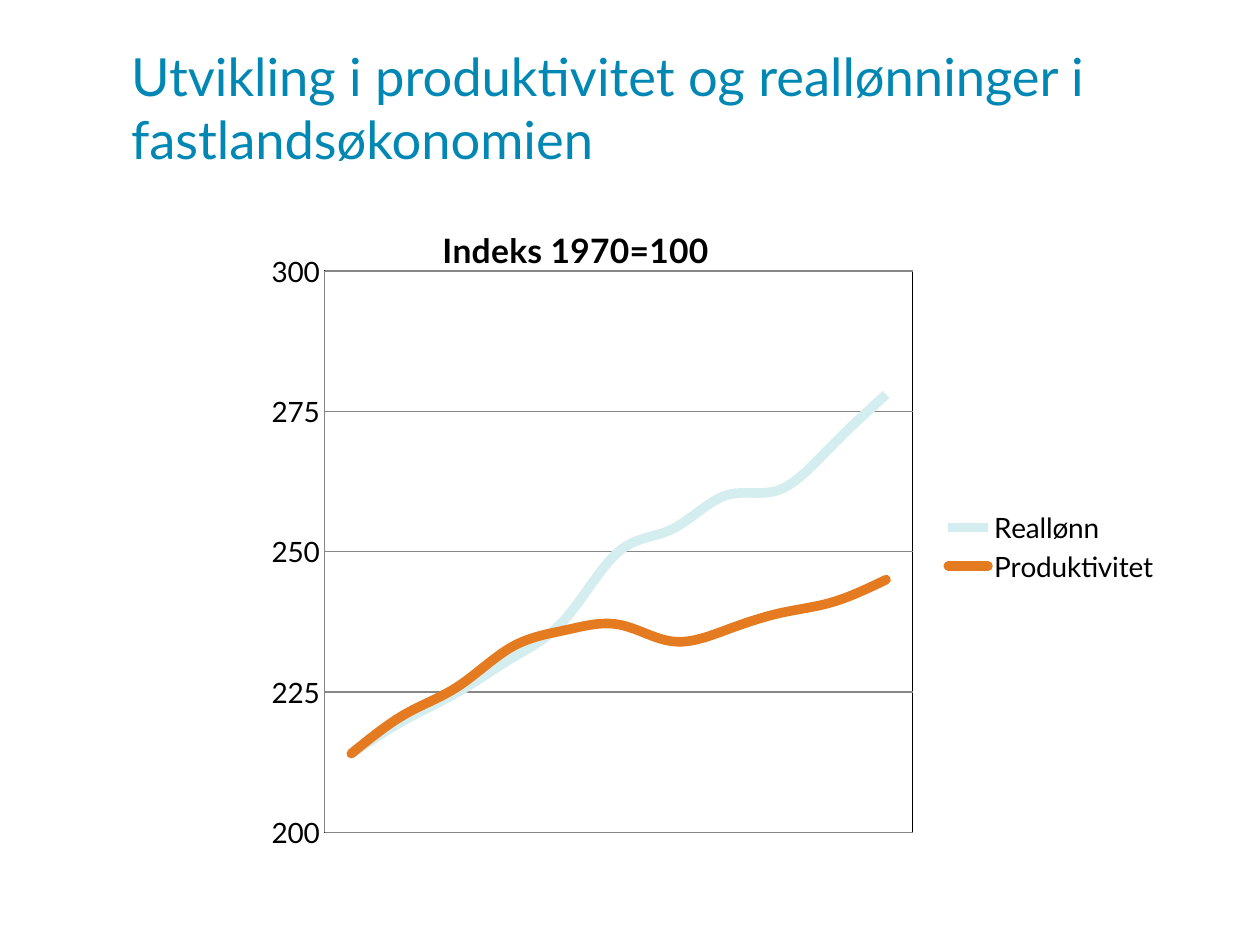
from lxml import etree
from pptx import Presentation
from pptx.chart.data import CategoryChartData
from pptx.dml.color import RGBColor
from pptx.enum.chart import XL_CHART_TYPE as ChartType, XL_LEGEND_POSITION as LegendPosition
from pptx.enum.chart import XL_TICK_LABEL_POSITION as LabelPosition, XL_TICK_MARK as TickMark
from pptx.enum.text import MSO_ANCHOR as Anchor, PP_ALIGN as Align
from pptx.oxml import parse_xml
from pptx.oxml.ns import nsdecls, qn
from pptx.util import Inches, Pt

FONT = "Lato"
YEARS = [str(year) for year in range(2002, 2013)]
INDEXES = [
    ("Reallønn", "D4EDEF", "flat",
     [214, 220, 225, 231, 238, 250, 254, 260, 261, 269, 278]),
    ("Produktivitet", "E57B20", "rnd",
     [214, 221, 226, 233, 236, 237, 234, 236, 239, 241, 245]),
]


def color(value):
    return RGBColor.from_string(value)


def style_font(font, size, value, bold=False):
    font.name = FONT
    font.size = Pt(size)
    font.bold = bold
    font.color.rgb = color(value)


def style_line(line, value, width):
    line.color.rgb = color(value)
    line.width = Pt(width)


def manual_layout(inner=False, **shares):
    layout = etree.Element(qn("c:layout"))
    manual = etree.SubElement(layout, qn("c:manualLayout"))
    settings = {"layoutTarget": "inner"} if inner else {}
    settings.update(xMode="edge", yMode="edge", **shares)
    for tag, setting in settings.items():
        etree.SubElement(manual, qn(f"c:{tag}")).set("val", str(setting))
    return layout


def add_heading(slide, text):
    heading = slide.shapes.title
    heading.left, heading.top = Inches(0.94), Inches(0.3)
    heading.width, heading.height = Inches(8.56), Inches(1.25)
    frame = heading.text_frame
    frame.word_wrap = True
    frame.vertical_anchor = Anchor.TOP
    paragraph = frame.paragraphs[0]
    paragraph.alignment = Align.LEFT
    run = paragraph.add_run()
    run.text = text
    style_font(run.font, 30, "0087B3")


def style_axes(chart):
    years, index = chart.category_axis, chart.value_axis
    for axis in (years, index):
        axis.major_tick_mark = axis.minor_tick_mark = TickMark.NONE
        style_line(axis.format.line, "868686", 0.75)
    years.tick_label_position = LabelPosition.NONE
    index.minimum_scale, index.maximum_scale = 200, 300
    index.major_unit = 25
    index.has_major_gridlines = True
    style_line(index.major_gridlines.format.line, "868686", 0.75)


def add_chart_title(chart, text):
    chart.has_title = True
    title = chart.chart_title
    run = title.text_frame.paragraphs[0].add_run()
    run.text = text
    style_font(run.font, 19.2, "000000", bold=True)
    title_xml = chart._chartSpace.chart.find(qn("c:title"))
    for layout in title_xml.findall(qn("c:layout")):
        title_xml.remove(layout)
    title_xml.find(qn("c:tx")).addnext(manual_layout(x=0.21, y=0.03))


def style_plot_area(chart):
    area = chart._chartSpace.chart.plotArea
    for layout in area.findall(qn("c:layout")):
        area.remove(layout)
    area.insert(0, manual_layout(inner=True, x=0.09, y=0.105, w=0.631, h=0.804))
    area.append(parse_xml(
        f'<c:spPr {nsdecls("c", "a")}><a:noFill/><a:ln w="9525"><a:solidFill>'
        '<a:srgbClr val="000000"/></a:solidFill></a:ln></c:spPr>'))


def add_index_chart(slide):
    data = CategoryChartData()
    data.categories = YEARS
    for name, _, _, values in INDEXES:
        data.add_series(name, values)
    chart = slide.shapes.add_chart(
        ChartType.LINE, Inches(1.91), Inches(1.57), Inches(7.4), Inches(5.54), data).chart
    style_font(chart.font, 16, "000000")
    chart.plots[0].vary_by_categories = False
    for series, (_, hue, cap, _) in zip(chart.plots[0].series, INDEXES):
        series.smooth = True
        style_line(series.format.line, hue, 5.5)
        series._element.find(qn("c:spPr")).find(qn("a:ln")).set("cap", cap)
    style_axes(chart)
    add_chart_title(chart, "Indeks 1970=100")
    style_plot_area(chart)
    chart.has_legend = True
    chart.legend.position = LegendPosition.RIGHT
    chart.legend.include_in_layout = False
    style_font(chart.legend.font, 16, "000000")


def main():
    deck = Presentation()
    deck.slide_width, deck.slide_height = Inches(10), Inches(7.5)
    slide = deck.slides.add_slide(deck.slide_layouts[5])
    add_heading(slide, "Utvikling i produktivitet og reallønninger i fastlandsøkonomien")
    add_index_chart(slide)
    deck.save("out.pptx")


if __name__ == "__main__":
    main()
